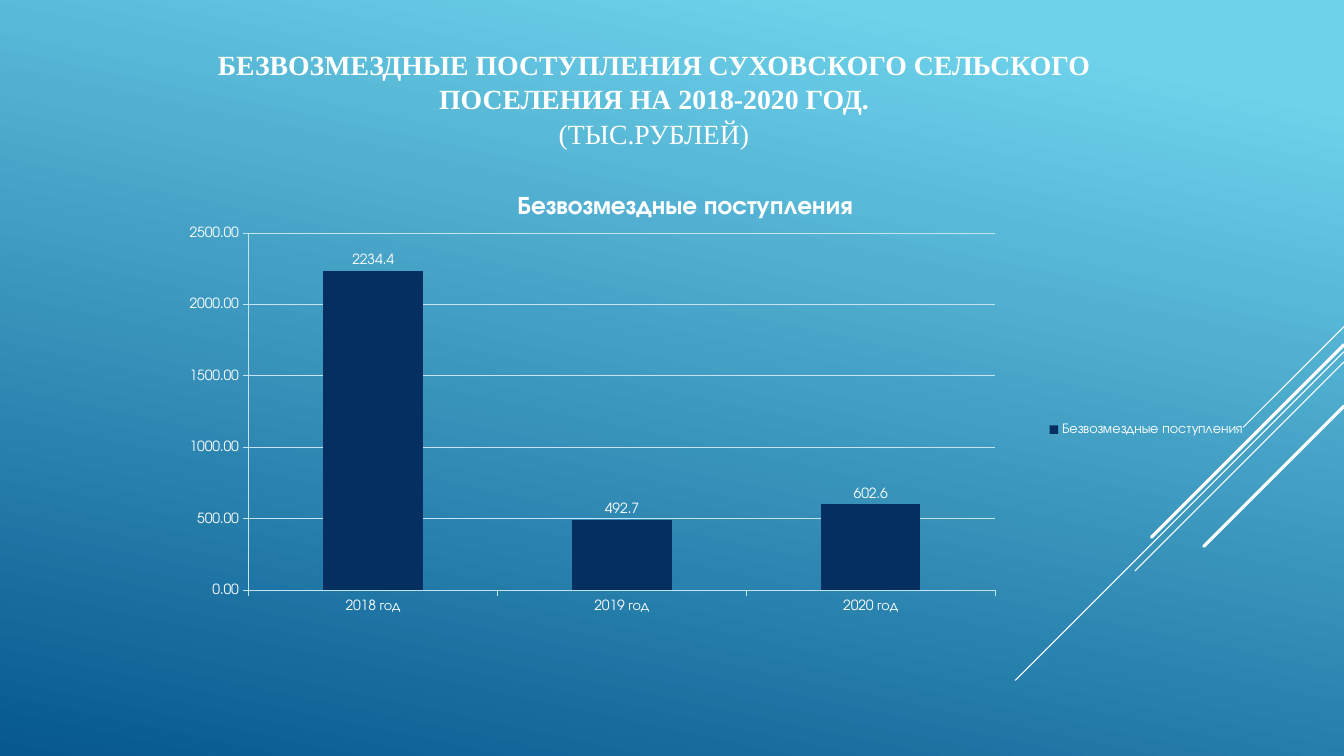
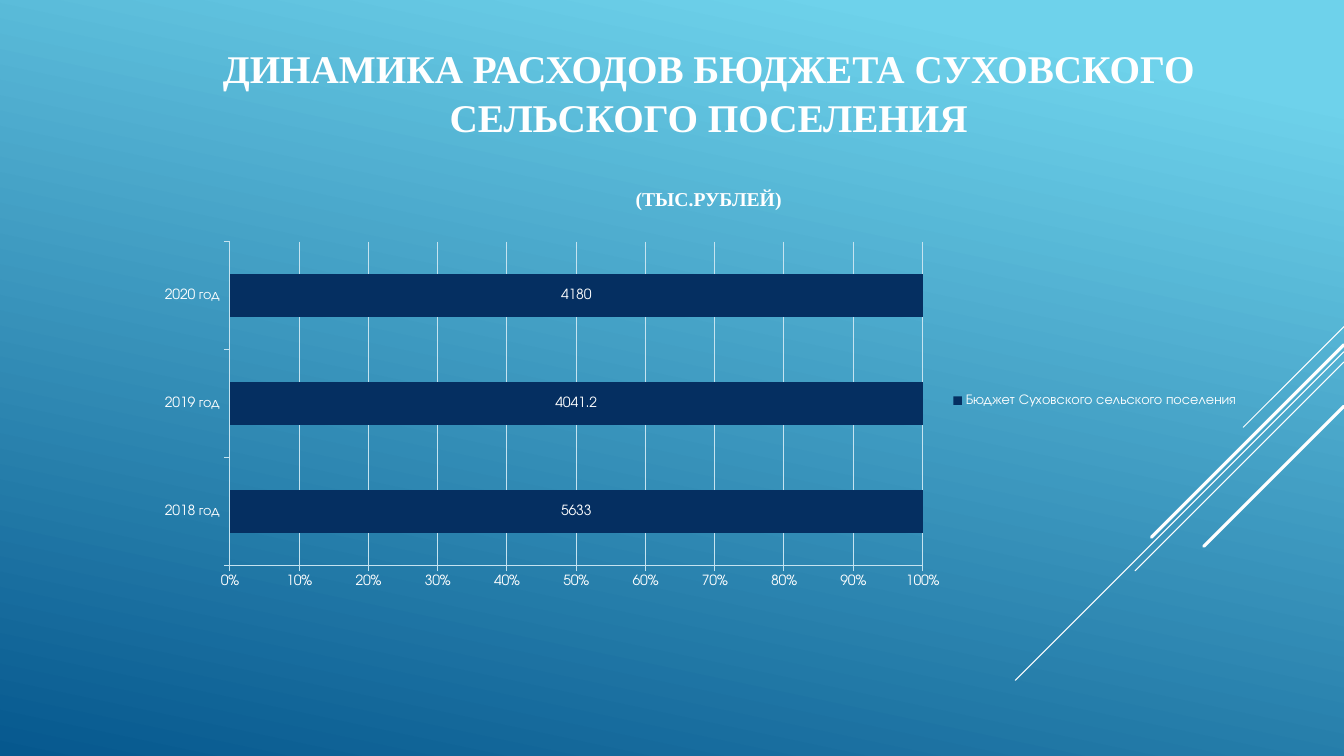
from dataclasses import dataclass
from typing import Optional

from lxml.etree import SubElement
from pptx import Presentation
from pptx.chart.chart import Chart
from pptx.chart.data import CategoryChartData
from pptx.dml.color import RGBColor
from pptx.enum.chart import XL_CHART_TYPE, XL_LABEL_POSITION, XL_LEGEND_POSITION, XL_TICK_MARK
from pptx.enum.shapes import MSO_CONNECTOR
from pptx.enum.text import MSO_ANCHOR, PP_ALIGN
from pptx.oxml import parse_xml
from pptx.oxml.ns import nsdecls, qn
from pptx.slide import Slide
from pptx.util import Emu, Inches, Pt

SLIDE_WIDTH = Inches(13.33)
SLIDE_HEIGHT = Inches(7.5)
WHITE = "FFFFFF"
NAVY = "052F61"
RULE = "C5E3F0"
BACKGROUND_STOPS = [(0.1, "6ED2EB"), (1.0, "06588E")]
BACKGROUND_ANGLE = 258
TITLE_FONT = "Times New Roman"
CHART_FONT = "TeX Gyre Adventor"
YEARS = ["2018 год", "2019 год", "2020 год"]


@dataclass(frozen=True)
class Box:
    """A rectangle in percent of the slide's width and height."""
    left: float
    top: float
    width: float
    height: float

    def lengths(self) -> tuple[Emu, Emu, Emu, Emu]:
        return across(self.left), down(self.top), across(self.width), down(self.height)


@dataclass(frozen=True)
class Ray:
    """A 45 degree line from the right edge: start in percent of height, run in percent of width."""
    start: float
    run: float
    weight: float


@dataclass(frozen=True)
class TitleLine:
    text: str
    size: float
    bold: bool = True
    space_before: float = 0


@dataclass(frozen=True)
class ChartPlan:
    box: Box
    kind: XL_CHART_TYPE
    series: str
    values: list[float]
    axis_format: str
    label_format: str
    label_position: XL_LABEL_POSITION
    plot_layout: dict[str, float]
    legend_layout: dict[str, float]
    title: Optional[str] = None
    overlap: int = 0
    axis_maximum: Optional[float] = None
    axis_step: Optional[float] = None


@dataclass(frozen=True)
class Page:
    title_box: Box
    title: list[TitleLine]
    chart: ChartPlan


RAYS = [
    Ray(43.2, 7.5, 0.75),
    Ray(46.53, 24.45, 0.75),
    Ray(47.87, 15.55, 0.75),
    Ray(45.6, 14.33, 2.25),
    Ray(53.73, 10.43, 2.25),
]

PAGES = [
    Page(
        Box(13.65, 6.13, 70, 20),
        [
            TitleLine("БЕЗВОЗМЕЗДНЫЕ ПОСТУПЛЕНИЯ СУХОВСКОГО СЕЛЬСКОГО "
                      "ПОСЕЛЕНИЯ НА 2018-2020 ГОД.", 19.8),
            TitleLine("(ТЫС.РУБЛЕЙ)", 19.8, bold=False),
        ],
        ChartPlan(
            Box(5.62, 22.93, 90.75, 63.2),
            XL_CHART_TYPE.COLUMN_CLUSTERED,
            "Безвозмездные поступления",
            [2234.4, 492.7, 602.6],
            "0.00", "0.0", XL_LABEL_POSITION.OUTSIDE_END,
            {"x": 0.142, "y": 0.125, "w": 0.612, "h": 0.748},
            {"x": 0.795, "y": 0.515},
            title="Безвозмездные поступления",
            axis_maximum=2500,
            axis_step=500,
        ),
    ),
    Page(
        Box(9, 5.6, 87.45, 22),
        [
            TitleLine("ДИНАМИКА РАСХОДОВ БЮДЖЕТА СУХОВСКОГО СЕЛЬСКОГО ПОСЕЛЕНИЯ", 28),
            TitleLine("(ТЫС.РУБЛЕЙ)", 14, space_before=33),
        ],
        ChartPlan(
            Box(5.62, 23.33, 89.02, 57.2),
            XL_CHART_TYPE.BAR_STACKED_100,
            "Бюджет Суховского сельского поселения",
            [5633, 4041.2, 4180],
            "0%", "General", XL_LABEL_POSITION.CENTER,
            {"x": 0.129, "y": 0.151, "w": 0.579, "h": 0.749},
            {"x": 0.73, "y": 0.495},
            overlap=100,
        ),
    ),
]


def across(percent: float) -> Emu:
    return Emu(round(SLIDE_WIDTH * percent / 100))


def down(percent: float) -> Emu:
    return Emu(round(SLIDE_HEIGHT * percent / 100))


def color(value: str) -> RGBColor:
    return RGBColor.from_string(value)


def paint_background(presentation: Presentation) -> None:
    fill = presentation.slide_master.background.fill
    fill.gradient()
    fill.gradient_angle = BACKGROUND_ANGLE
    for stop, (position, value) in zip(fill.gradient_stops, BACKGROUND_STOPS):
        stop.position = position
        stop.color.rgb = color(value)


def add_ray(slide: Slide, ray: Ray) -> None:
    top, run = down(ray.start), across(ray.run)
    connector = slide.shapes.add_connector(
        MSO_CONNECTOR.STRAIGHT, SLIDE_WIDTH, top, SLIDE_WIDTH - run, top + run)
    connector.line.color.rgb = color(WHITE)
    connector.line.width = Pt(ray.weight)
    properties = connector.element.spPr
    properties.find(qn("a:ln")).set("cap", "rnd")
    SubElement(properties, qn("a:effectLst"))


def add_title(slide: Slide, box: Box, lines: list[TitleLine]) -> None:
    frame = slide.shapes.add_textbox(*box.lengths()).text_frame
    frame.word_wrap = True
    frame.vertical_anchor = MSO_ANCHOR.TOP
    frame.margin_top = frame.margin_bottom = 0
    for index, line in enumerate(lines):
        paragraph = frame.add_paragraph() if index else frame.paragraphs[0]
        paragraph.alignment = PP_ALIGN.CENTER
        paragraph.line_spacing = 1.04
        paragraph.space_before = Pt(line.space_before)
        run = paragraph.add_run()
        run.text = line.text
        run.font.name = TITLE_FONT
        run.font.size = Pt(line.size)
        run.font.bold = line.bold
        run.font.color.rgb = color(WHITE)


def set_layout(parent, index: int, shares: dict[str, float], inner: bool = False) -> None:
    """Place a plot area or legend by shares of the chart's size."""
    for old in parent.findall(qn("c:layout")):
        parent.remove(old)
    layout = parse_xml(f"<c:layout {nsdecls('c')}><c:manualLayout/></c:layout>")
    manual = layout[0]
    if inner:
        SubElement(manual, qn("c:layoutTarget")).set("val", "inner")
    for name in ("x", "y"):
        SubElement(manual, qn(f"c:{name}Mode")).set("val", "edge")
    for name, share in shares.items():
        SubElement(manual, qn(f"c:{name}")).set("val", str(share))
    parent.insert(index, layout)


def style_axes(chart: Chart, plan: ChartPlan) -> None:
    for axis in (chart.category_axis, chart.value_axis):
        axis.major_tick_mark = XL_TICK_MARK.OUTSIDE
        axis.minor_tick_mark = XL_TICK_MARK.NONE
        axis.format.line.color.rgb = color(RULE)
        axis.format.line.width = Pt(0.75)
    chart.category_axis.has_major_gridlines = False
    value_axis = chart.value_axis
    value_axis.has_major_gridlines = True
    value_axis.major_gridlines.format.line.color.rgb = color(RULE)
    value_axis.major_gridlines.format.line.width = Pt(0.75)
    value_axis.tick_labels.number_format = plan.axis_format
    value_axis.tick_labels.number_format_is_linked = False
    if plan.axis_maximum is not None:
        value_axis.minimum_scale = 0
        value_axis.maximum_scale = plan.axis_maximum
        value_axis.major_unit = plan.axis_step


def style_bars(chart: Chart, plan: ChartPlan) -> None:
    plot = chart.plots[0]
    plot.vary_by_categories = False
    plot.gap_width = 150
    plot.overlap = plan.overlap
    fill = plot.series[0].format.fill
    fill.solid()
    fill.fore_color.rgb = color(NAVY)
    plot.has_data_labels = True
    labels = plot.data_labels
    labels.show_value = True
    labels.number_format = plan.label_format
    labels.number_format_is_linked = False
    labels.position = plan.label_position


def add_chart_title(chart: Chart, text: str) -> None:
    run = chart.chart_title.text_frame.paragraphs[0].add_run()
    run.text = text
    run.font.name = CHART_FONT
    run.font.size = Pt(18)
    run.font.bold = True
    run.font.color.rgb = color(WHITE)
    chart.chart_title.include_in_layout = False


def add_budget_chart(slide: Slide, plan: ChartPlan) -> None:
    data = CategoryChartData()
    data.categories = YEARS
    data.add_series(plan.series, plan.values)
    chart = slide.shapes.add_chart(plan.kind, *plan.box.lengths(), data).chart
    chart.font.name = CHART_FONT
    chart.font.size = Pt(10)
    chart.font.color.rgb = color(WHITE)
    chart.has_title = plan.title is not None
    if plan.title is not None:
        add_chart_title(chart, plan.title)
    style_axes(chart, plan)
    style_bars(chart, plan)
    chart.has_legend = True
    chart.legend.position = XL_LEGEND_POSITION.RIGHT
    chart.legend.include_in_layout = False
    chart_element = chart.element.find(qn("c:chart"))
    set_layout(chart_element.find(qn("c:plotArea")), 0, plan.plot_layout, inner=True)
    set_layout(chart_element.find(qn("c:legend")), 1, plan.legend_layout)


def main() -> None:
    presentation = Presentation()
    presentation.slide_width = SLIDE_WIDTH
    presentation.slide_height = SLIDE_HEIGHT
    paint_background(presentation)
    blank_layout = presentation.slide_layouts[6]
    for page in PAGES:
        slide = presentation.slides.add_slide(blank_layout)
        for ray in RAYS:
            add_ray(slide, ray)
        add_title(slide, page.title_box, page.title)
        add_budget_chart(slide, page.chart)
    presentation.save("out.pptx")


if __name__ == "__main__":
    main()
